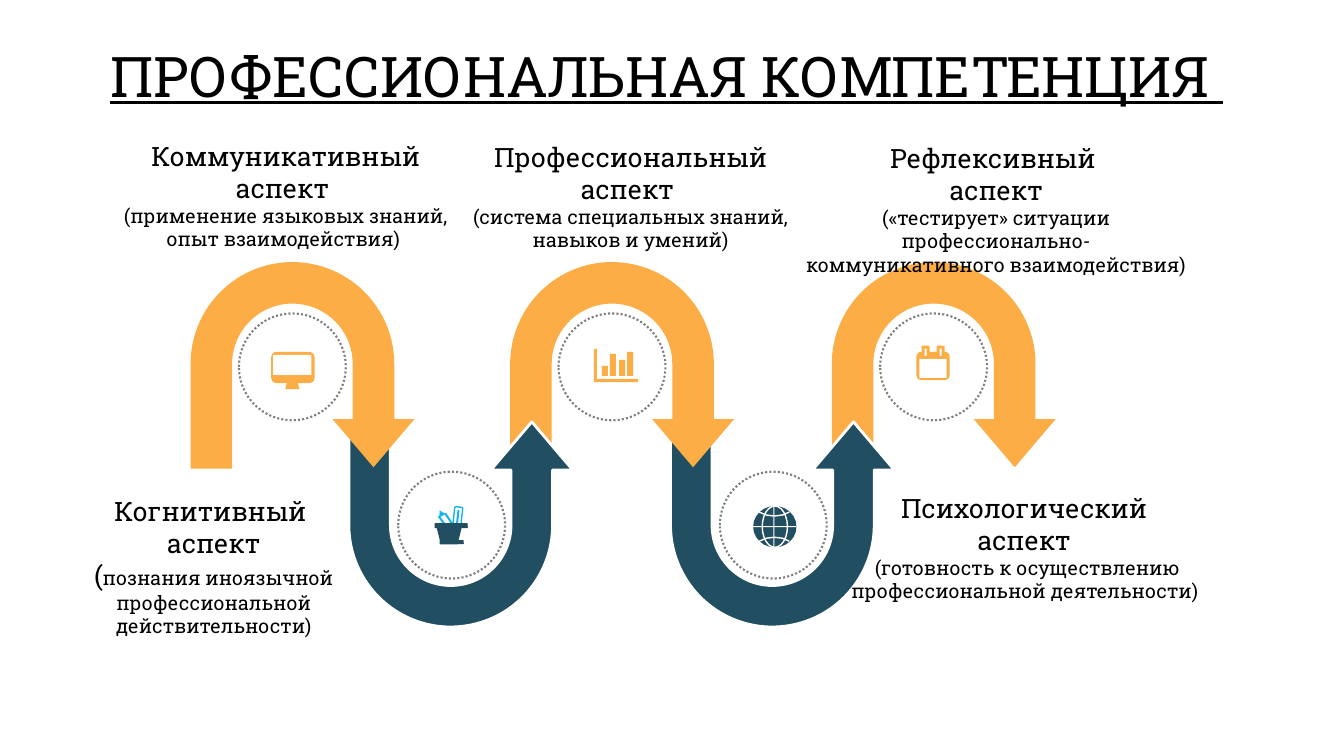
"""Build the professional competence slide with its winding arrow and five aspects."""
from dataclasses import dataclass
from typing import NamedTuple

from pptx import Presentation
from pptx.dml.color import RGBColor
from pptx.enum.dml import MSO_LINE
from pptx.enum.shapes import MSO_SHAPE
from pptx.enum.text import MSO_ANCHOR, MSO_AUTO_SIZE, PP_ALIGN
from pptx.oxml.ns import qn
from pptx.shapes.autoshape import Shape
from pptx.slide import Slide
from pptx.text.text import TextFrame
from pptx.util import Inches, Pt

Box = tuple[float, float, float, float]


@dataclass(frozen=True)
class Theme:
    font: str = "Roboto Slab"
    ink: str = "000000"
    white: str = "FFFFFF"
    orange: str = "FDAD46"
    navy: str = "214E61"
    cyan: str = "17B5E5"
    grey: str = "808080"
    title: float = 40
    heading: float = 19
    detail: float = 14


class Part(NamedTuple):
    kind: MSO_SHAPE
    box: Box
    fill: str | None
    line: str | None = None
    turn: float = 0


class Outline(NamedTuple):
    contours: tuple[tuple[tuple[float, float], ...], ...]
    fill: str | None
    line: str | None = None


class Caption(NamedTuple):
    box: Box
    headings: tuple[str, ...]
    detail: str
    lead: str = ""


THEME = Theme()
BEND_LEFTS = (1.89, 3.46, 5.06, 6.65, 8.25)
BADGE_LEFTS = (2.37, 3.95, 5.54, 7.14, 8.73)
BEND_TOPS, BADGE_TOPS = (2.6, 4.17), (3.11, 4.68)
BEND_ADJUSTMENTS = (0.201, 0.198, 0.233, 0.493, 0.993)
RECT, ROUND, OVAL = MSO_SHAPE.RECTANGLE, MSO_SHAPE.ROUNDED_RECTANGLE, MSO_SHAPE.OVAL

MONITOR = (
    Part(ROUND, (0.32, 0.38, 0.43, 0.31), THEME.orange),
    Part(RECT, (0.34, 0.41, 0.38, 0.2), THEME.white),
    Part(MSO_SHAPE.TRAPEZOID, (0.46, 0.68, 0.14, 0.07), THEME.orange),
)
POT = (
    Part(MSO_SHAPE.ISOSCELES_TRIANGLE, (0.39, 0.38, 0.07, 0.06), THEME.cyan, turn=-28),
    Part(ROUND, (0.42, 0.43, 0.02, 0.1), THEME.cyan, turn=-36),
    Part(ROUND, (0.49, 0.4, 0.02, 0.13), THEME.cyan, turn=-34),
    Part(ROUND, (0.55, 0.35, 0.08, 0.2), None, THEME.cyan, 6),
    Part(ROUND, (0.58, 0.38, 0.02, 0.14), THEME.cyan, turn=6),
    Part(ROUND, (0.36, 0.51, 0.33, 0.05), THEME.navy),
    Part(MSO_SHAPE.TRAPEZOID, (0.38, 0.55, 0.25, 0.14), THEME.navy, turn=180),
    Part(ROUND, (0.41, 0.68, 0.24, 0.04), THEME.navy),
)
AXES = ((0.35, 0.35), (0.38, 0.35), (0.38, 0.65), (0.79, 0.65), (0.79, 0.68), (0.35, 0.68))
BARS = tuple(
    ((left, 0.62), (left, top), (left + 0.06, top), (left + 0.06, 0.62))
    for left, top in ((0.43, 0.52), (0.51, 0.4), (0.6, 0.46), (0.68, 0.38)))
CHART = (Outline((AXES, *BARS), THEME.orange),)
CALENDAR = (
    Part(ROUND, (0.36, 0.38, 0.33, 0.28), THEME.orange),
    Part(RECT, (0.39, 0.45, 0.27, 0.19), THEME.white),
    *(Part(ROUND, (left, 0.32, 0.08, 0.13), THEME.orange) for left in (0.41, 0.56)),
    *(Part(ROUND, (left, 0.35, 0.02, 0.07), THEME.white) for left in (0.44, 0.59)),
)
PARALLELS = tuple(
    ((0.39, edge), (0.46, bend), (0.54, middle), (0.62, bend), (0.69, edge))
    for edge, bend, middle in ((0.4, 0.43, 0.44), (0.69, 0.66, 0.65)))
GLOBE = (
    Part(OVAL, (0.33, 0.34, 0.43, 0.41), THEME.navy),
    Part(OVAL, (0.42, 0.34, 0.25, 0.41), None, THEME.white),
    Part(RECT, (0.53, 0.34, 0.01, 0.41), THEME.white),
    Part(RECT, (0.33, 0.54, 0.43, 0.01), THEME.white),
    Outline(PARALLELS, None, THEME.white),
)
ICONS = (MONITOR, POT, CHART, GLOBE, CALENDAR)

CAPTIONS = (
    Caption((1.13, 1.34, 3.41, 1.21), ("Коммуникативный аспект ",),
            "(применение языковых знаний, опыт взаимодействия) "),
    Caption((4.55, 1.35, 3.41, 1.21), ("Профессиональный аспект ",),
            "(система специальных знаний, навыков и умений)"),
    Caption((7.89, 1.36, 3.98, 1.45), ("Рефлексивный ", "аспект"),
            "(«тестирует» ситуации профессионально-коммуникативного взаимодействия) "),
    Caption((0.33, 4.86, 3.58, 1.53), ("Когнитивный ", "аспект"),
            "познания иноязычной профессиональной действительности)", "("),
    Caption((8.26, 4.83, 3.86, 1.21), ("Психологический ", "аспект "),
            "(готовность к осуществлению профессиональной деятельности) "),
)


def paint(shape: Shape, fill: str | None, line: str | None, weight: float = 1) -> None:
    shape.shadow.inherit = False
    shape.fill.background()
    shape.line.fill.background()
    if fill:
        shape.fill.solid()
        shape.fill.fore_color.rgb = RGBColor.from_string(fill)
    if line:
        shape.line.color.rgb = RGBColor.from_string(line)
        shape.line.width = Pt(weight)


def draw_part(page: Slide, part: Part, left: float, top: float, weight: float = 1) -> Shape:
    x, y, width, height = part.box
    shape = page.shapes.add_shape(part.kind, Inches(left + x), Inches(top + y),
                                  Inches(width), Inches(height))
    shape.rotation = part.turn
    paint(shape, part.fill, part.line, weight)
    return shape


def draw_outline(page: Slide, outline: Outline, left: float, top: float) -> None:
    builder = page.shapes.build_freeform()
    for contour in outline.contours:
        points = [(Inches(left + x), Inches(top + y)) for x, y in contour]
        builder.move_to(*points[0])
        builder.add_line_segments(points[1:], close=bool(outline.fill))
    paint(builder.convert_to_shape(), outline.fill, outline.line)


def draw_bend(page: Slide, index: int) -> None:
    lower = index % 2
    fill, line = (THEME.navy, THEME.white) if lower else (THEME.orange, None)
    part = Part(MSO_SHAPE.U_TURN_ARROW, (0, 0, 2.22, 2.05), fill, line, 180 * lower)
    bend = draw_part(page, part, BEND_LEFTS[index], BEND_TOPS[lower], 2)
    for position, value in enumerate(BEND_ADJUSTMENTS):
        bend.adjustments[position] = value
    if lower:
        bend._element.spPr.find(qn("a:xfrm")).set("flipH", "1")


def draw_badge(page: Slide, index: int) -> None:
    left, top = BADGE_LEFTS[index], BADGE_TOPS[index % 2]
    ring = Part(OVAL, (0, 0, 1.06, 1.06), None, THEME.grey)
    draw_part(page, ring, left, top, 1.5).line.dash_style = MSO_LINE.ROUND_DOT
    for piece in ICONS[index]:
        draw = draw_part if isinstance(piece, Part) else draw_outline
        draw(page, piece, left, top)


def write_text(page: Slide, box: Box, text: str, size: float, detail: str = "") -> TextFrame:
    frame = page.shapes.add_textbox(*map(Inches, box)).text_frame
    frame.word_wrap = True
    frame.text = text
    if detail:
        frame.paragraphs[-1].add_run().text = detail
    for para in frame.paragraphs:
        para.alignment = PP_ALIGN.CENTER
        for span in para.runs:
            span.font.name = THEME.font
            span.font.size = Pt(THEME.detail if span.text == detail else size)
            span.font.color.rgb = RGBColor.from_string(THEME.ink)
    return frame


def main() -> None:
    deck = Presentation()
    deck.slide_width, deck.slide_height = Inches(13.33), Inches(7.5)
    page = deck.slides.add_slide(deck.slide_layouts[6])
    title = write_text(page, (0.31, 0.4, 12.61, 0.77), "ПРОФЕССИОНАЛЬНАЯ КОМПЕТЕНЦИЯ ", THEME.title)
    title.vertical_anchor = MSO_ANCHOR.MIDDLE
    title.paragraphs[0].line_spacing = 0.9
    title.paragraphs[0].runs[0].font.underline = True
    for index in reversed(range(len(ICONS))):
        draw_bend(page, index)
    for index in range(len(ICONS)):
        draw_badge(page, index)
    for caption in CAPTIONS:
        text = "\n".join((*caption.headings, caption.lead))
        frame = write_text(page, caption.box, text, THEME.heading, caption.detail)
        frame.auto_size = MSO_AUTO_SIZE.SHAPE_TO_FIT_TEXT
    deck.save("out.pptx")


if __name__ == "__main__":
    main()
